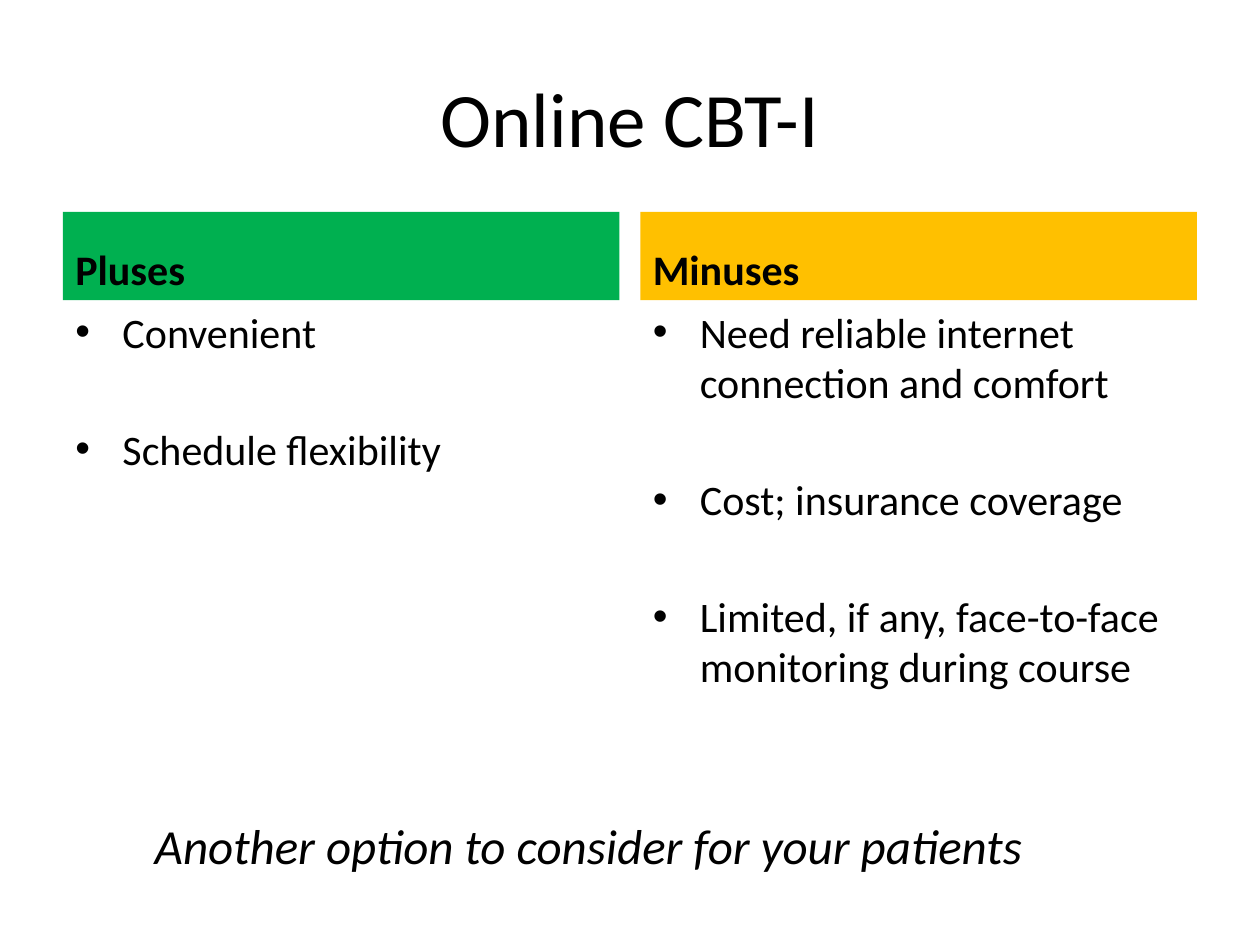
from dataclasses import dataclass

from lxml import etree
from pptx import Presentation
from pptx.dml.color import RGBColor
from pptx.enum import shapes, text
from pptx.oxml.ns import qn
from pptx.util import Cm, Pt


@dataclass(frozen=True)
class Theme:
    font: str = "Calibri"
    ink: RGBColor = RGBColor(0, 0, 0)
    plus: RGBColor = RGBColor(0x00, 0xB0, 0x50)
    minus: RGBColor = RGBColor(0xFF, 0xC0, 0x00)
    title_size: Pt = Pt(44)
    closing_size: Pt = Pt(28)
    body_size: Pt = Pt(24)
    item_gap: Pt = Pt(38)


@dataclass(frozen=True)
class Box:
    left: Cm
    top: Cm
    width: Cm
    height: Cm


@dataclass(frozen=True)
class Column:
    heading: str
    color: RGBColor
    items: tuple[str, ...]


THEME = Theme()
MARGIN = Cm(1.27)
COLUMN_WIDTH = Cm(11.22)
COLUMN_STEP = Cm(11.64)
HEADING_TOP, HEADING_HEIGHT = Cm(4.27), Cm(1.78)
LIST_HEIGHT = Cm(10.97)
BULLET_INDENT = Cm(0.95)

COLUMNS = (
    Column("Pluses", THEME.plus, ("Convenient", "Schedule flexibility")),
    Column(
        "Minuses",
        THEME.minus,
        (
            "Need reliable internet connection and comfort",
            "Cost; insurance coverage",
            "Limited, if any, face-to-face monitoring during course",
        ),
    ),
)


def write(shape, lines, size, anchor, align=text.PP_ALIGN.LEFT, bold=False, italic=False) -> None:
    """Fill a shape with one styled paragraph per line."""
    frame = shape.text_frame
    frame.word_wrap = True
    frame.vertical_anchor = anchor
    frame.text = "\n".join(lines)
    for paragraph in frame.paragraphs:
        paragraph.alignment = align
        for run in paragraph.runs:
            font = run.font
            font.name, font.size, font.color.rgb = THEME.font, size, THEME.ink
            font.bold, font.italic = bold, italic


def add_bullet(paragraph) -> None:
    properties = paragraph._p.get_or_add_pPr()
    properties.set("marL", str(BULLET_INDENT))
    properties.set("indent", str(-BULLET_INDENT))
    etree.SubElement(properties, qn("a:buFont")).set("typeface", "Arial")
    etree.SubElement(properties, qn("a:buChar")).set("char", "•")


def add_text(slide, box: Box):
    return slide.shapes.add_textbox(box.left, box.top, box.width, box.height)


def add_centred_line(slide, line: str, box: Box, size: Pt, italic: bool = False) -> None:
    write(add_text(slide, box), [line], size, text.MSO_ANCHOR.MIDDLE,
          text.PP_ALIGN.CENTER, italic=italic)


def add_column(slide, column: Column, left: Cm) -> None:
    heading = slide.shapes.add_shape(
        shapes.MSO_SHAPE.RECTANGLE, left, HEADING_TOP, COLUMN_WIDTH, HEADING_HEIGHT
    )
    heading.shadow.inherit = False
    heading.fill.solid()
    heading.fill.fore_color.rgb = column.color
    heading.line.fill.background()
    write(heading, [column.heading], THEME.body_size, text.MSO_ANCHOR.BOTTOM, bold=True)

    box = Box(left, HEADING_TOP + HEADING_HEIGHT, COLUMN_WIDTH, LIST_HEIGHT)
    bullets = add_text(slide, box)
    write(bullets, column.items, THEME.body_size, text.MSO_ANCHOR.TOP)
    for paragraph in bullets.text_frame.paragraphs:
        paragraph.space_after = THEME.item_gap
        add_bullet(paragraph)


def main() -> None:
    presentation = Presentation()
    presentation.slide_width, presentation.slide_height = Cm(25.4), Cm(19.05)
    slide = presentation.slides.add_slide(presentation.slide_layouts[6])

    add_centred_line(slide, "Online CBT-I",
                     Box(MARGIN, Cm(0.76), Cm(22.86), Cm(3.18)), THEME.title_size)
    for index, column in enumerate(COLUMNS):
        add_column(slide, column, MARGIN + index * COLUMN_STEP)
    add_centred_line(slide, "Another option to consider for your patients",
                     Box(Cm(0.43), Cm(15.44), Cm(22.86), Cm(3.18)),
                     THEME.closing_size, italic=True)

    presentation.save("out.pptx")


if __name__ == "__main__":
    main()
